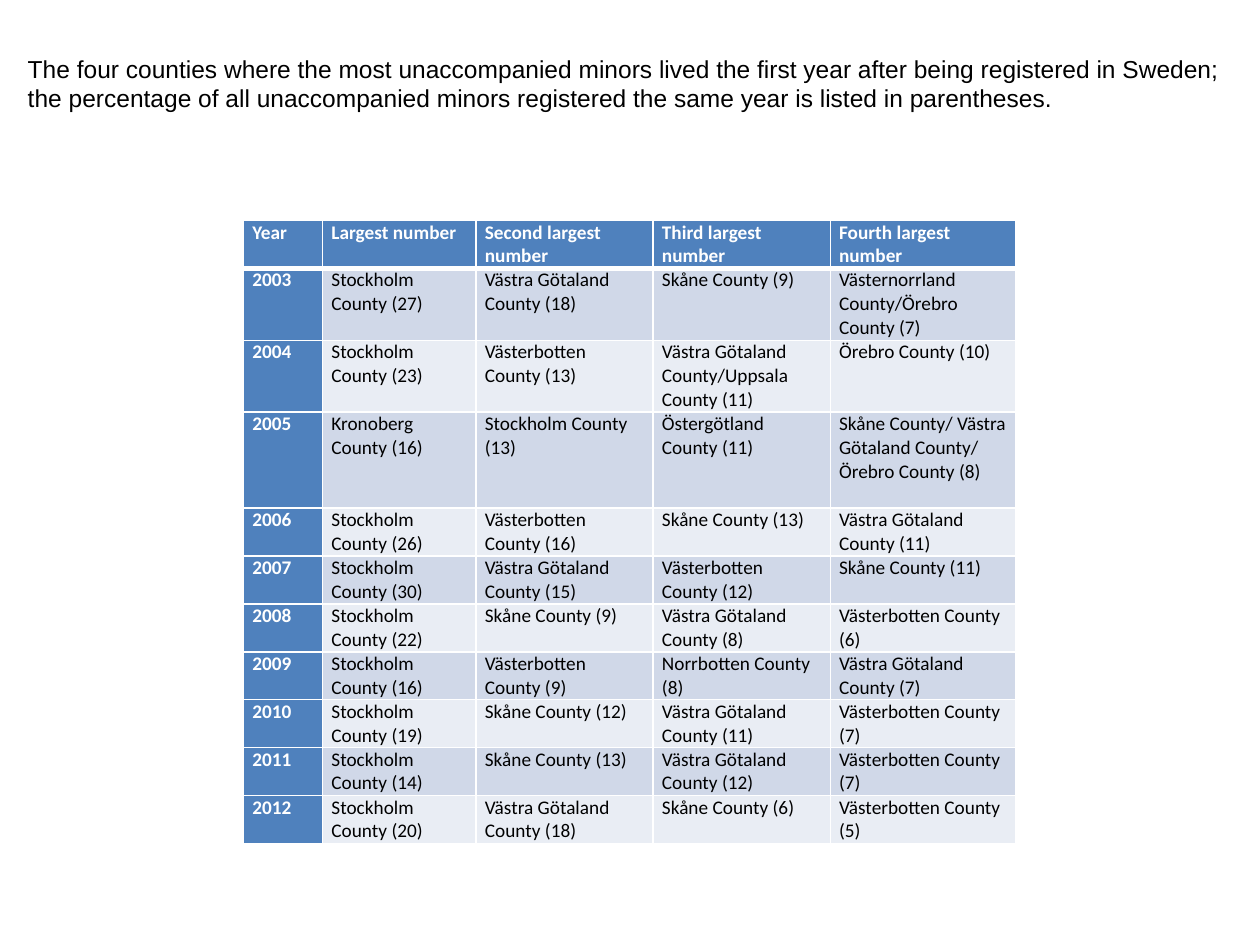
from dataclasses import dataclass
from typing import Any

import pptx
import pptx.dml.color
import pptx.enum.text
import pptx.oxml
import pptx.oxml.ns
import pptx.util

Pt = pptx.util.Pt
RGBColor = pptx.dml.color.RGBColor


@dataclass(frozen=True)
class Theme:
    accent: str = "4F81BD"
    odd_band: str = "D0D8E8"
    even_band: str = "E9EDF4"
    light: str = "FFFFFF"
    dark: str = "000000"
    heading_font: str = "Arial"
    table_font: str = "Calibri"
    heading_size: float = 14
    table_size: float = 11
    thin_rule: float = 1
    thick_rule: float = 3


@dataclass(frozen=True)
class Ranking:
    year: str
    counties: tuple[str, str, str, str]
    lines: int = 2


THEME = Theme()
SLIDE_SIZE = (720, 540)
HEADING_BOX = (8.64, 25.92, 698.4, 58.32)
TABLE_ORIGIN = (139.2, 126)
COLUMN_WIDTHS = (45.2, 87.7, 101.2, 101.2, 106)
LINE_HEIGHT = 13.7
HEADING = (
    "The four counties where the most unaccompanied minors lived the first year after being registered in Sweden;",
    "the percentage of all unaccompanied minors registered the same year is listed in parentheses.",
)
RANKINGS = (
    Ranking("Year", ("Largest number", "Second largest number",
                     "Third largest number", "Fourth largest number")),
    Ranking("2003", ("Stockholm County (27)", "Västra Götaland County (18)",
                     "Skåne County (9)", "Västernorrland County/Örebro County (7)"), 3),
    Ranking("2004", ("Stockholm County (23)", "Västerbotten County (13)",
                     "Västra Götaland County/Uppsala County (11)", "Örebro County (10)"), 3),
    Ranking("2005", ("Kronoberg County (16)", "Stockholm County (13)", "Östergötland County (11)",
                     "Skåne County/ Västra Götaland County/ Örebro County (8)"), 4),
    Ranking("2006", ("Stockholm County (26)", "Västerbotten County (16)",
                     "Skåne County (13)", "Västra Götaland County (11)")),
    Ranking("2007", ("Stockholm County (30)", "Västra Götaland County (15)",
                     "Västerbotten County (12)", "Skåne County (11)")),
    Ranking("2008", ("Stockholm County (22)", "Skåne County (9)",
                     "Västra Götaland County (8)", "Västerbotten County (6)")),
    Ranking("2009", ("Stockholm County (16)", "Västerbotten County (9)",
                     "Norrbotten County (8)", "Västra Götaland County (7)")),
    Ranking("2010", ("Stockholm County (19)", "Skåne County (12)",
                     "Västra Götaland County (11)", "Västerbotten County (7)")),
    Ranking("2011", ("Stockholm County (14)", "Skåne County (13)",
                     "Västra Götaland County (12)", "Västerbotten County (7)")),
    Ranking("2012", ("Stockholm County (20)", "Västra Götaland County (18)",
                     "Skåne County (6)", "Västerbotten County (5)")),
)


def apply_format(target: Any, values: dict[str, Any]) -> None:
    for attribute, value in values.items():
        setattr(target, attribute, value)


def format_font(font: Any, name: str, size: float, color: str, bold: bool = False) -> None:
    apply_format(font, {"name": name, "size": Pt(size), "bold": bold})
    font.color.rgb = RGBColor.from_string(color)


def draw_heading(heading: Any) -> None:
    left, top, width, height = map(Pt, HEADING_BOX)
    apply_format(heading, {"left": left, "top": top, "width": width, "height": height})
    apply_format(heading.text_frame, {
        "text": "\n".join(HEADING),
        "word_wrap": True,
        "auto_size": pptx.enum.text.MSO_AUTO_SIZE.NONE,
        "vertical_anchor": pptx.enum.text.MSO_ANCHOR.TOP,
        "margin_left": Pt(7.2),
        "margin_right": Pt(0),
        "margin_top": Pt(5),
        "margin_bottom": Pt(0),
    })
    for sentence in heading.text_frame.paragraphs:
        sentence.alignment = pptx.enum.text.PP_ALIGN.LEFT
        format_font(sentence.runs[0].font, THEME.heading_font, THEME.heading_size, THEME.dark)


def draw_borders(cell: Any, widths: dict[str, float]) -> None:
    properties = cell._tc.get_or_add_tcPr()
    for side, width in widths.items():
        properties.append(pptx.oxml.parse_xml(
            f'<a:ln{side} {pptx.oxml.ns.nsdecls("a")} w="{Pt(width)}">'
            f'<a:solidFill><a:srgbClr val="{THEME.light}"/></a:solidFill></a:ln{side}>'
        ))


def draw_cell(cell: Any, wording: str, row: int, column: int) -> None:
    labelled = row == 0 or column == 0
    band = THEME.odd_band if row % 2 else THEME.even_band
    apply_format(cell, {
        "text": wording,
        "margin_left": Pt(5),
        "margin_right": Pt(5),
        "margin_top": Pt(0),
        "margin_bottom": Pt(0),
        "vertical_anchor": pptx.enum.text.MSO_ANCHOR.TOP,
    })
    draw_borders(cell, {
        "L": THEME.thin_rule,
        "R": THEME.thin_rule,
        "T": THEME.thick_rule if row == 1 else THEME.thin_rule,
        "B": THEME.thick_rule if row == 0 else THEME.thin_rule,
    })
    cell.fill.solid()
    cell.fill.fore_color.rgb = RGBColor.from_string(THEME.accent if labelled else band)
    format_font(cell.text_frame.paragraphs[0].runs[0].font, THEME.table_font,
                THEME.table_size, THEME.light if labelled else THEME.dark, labelled)


def draw_rankings(slide: Any) -> None:
    height = LINE_HEIGHT * sum(ranking.lines for ranking in RANKINGS)
    rankings = slide.shapes.add_table(
        len(RANKINGS), len(COLUMN_WIDTHS), *map(Pt, TABLE_ORIGIN),
        Pt(sum(COLUMN_WIDTHS)), Pt(height),
    ).table
    rankings.first_col = True
    for column, width in zip(rankings.columns, COLUMN_WIDTHS):
        column.width = Pt(width)
    for row, ranking in enumerate(RANKINGS):
        rankings.rows[row].height = Pt(LINE_HEIGHT * ranking.lines)
        for column, wording in enumerate((ranking.year, *ranking.counties)):
            draw_cell(rankings.cell(row, column), wording, row, column)


def main() -> None:
    presentation = pptx.Presentation()
    width, height = map(Pt, SLIDE_SIZE)
    apply_format(presentation, {"slide_width": width, "slide_height": height})
    slide = presentation.slides.add_slide(presentation.slide_layouts.get_by_name("Title Only"))
    draw_heading(slide.shapes.title)
    draw_rankings(slide)
    presentation.save("out.pptx")


if __name__ == "__main__":
    main()
